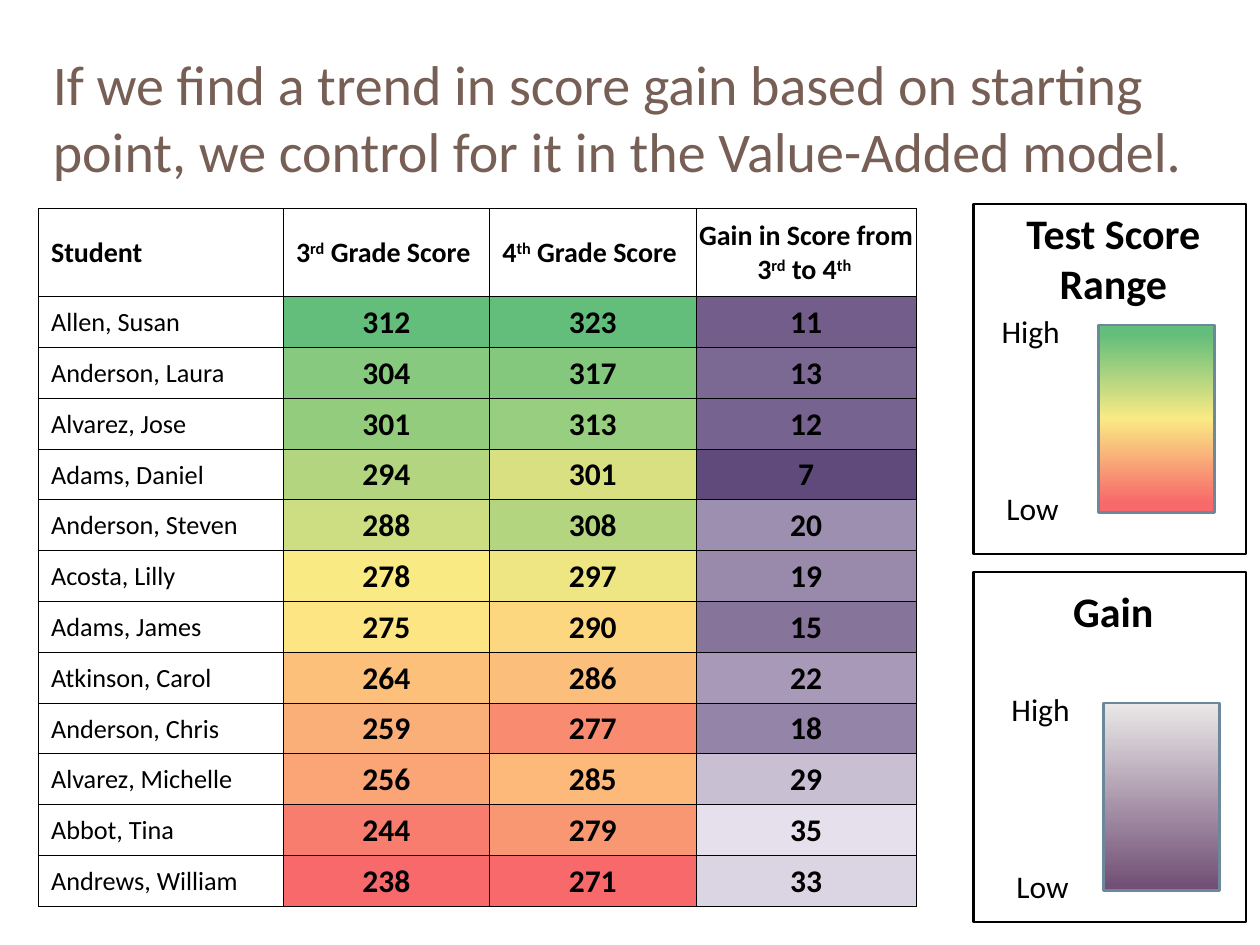
"""Build a slide with a score table and two colour scale legends."""
from copy import deepcopy

from lxml.etree import SubElement
from pptx import Presentation
from pptx.dml.color import RGBColor
from pptx.enum.shapes import MSO_SHAPE
from pptx.enum.text import MSO_ANCHOR, MSO_AUTO_SIZE, PP_ALIGN
from pptx.oxml.ns import qn
from pptx.util import Cm, Pt

BLACK = RGBColor(0x00, 0x00, 0x00)
BROWN = RGBColor(0x77, 0x5F, 0x55)
STEEL = RGBColor(0x6D, 0x87, 0x9B)
GREEN = RGBColor(0x63, 0xBE, 0x7B)
YELLOW = RGBColor(0xF9, 0xEA, 0x84)
RED = RGBColor(0xF8, 0x69, 0x6B)
PALE = RGBColor(0xEA, 0xE8, 0xE8)
PURPLE = RGBColor(0x70, 0x4D, 0x74)

TITLE = {"name": "Calibri", "size": Pt(32), "bold": False}
HEADER = {"name": "Calibri", "size": Pt(16), "bold": True}
STUDENT = {"name": "Calibri", "size": Pt(15), "bold": False}
SCORE = {"name": "Calibri", "size": Pt(18), "bold": True}
HEADING = {"name": "Calibri", "size": Pt(24), "bold": True}
LABEL = {"name": "Calibri", "size": Pt(18), "bold": False}

HEADERS = [
    [("Student", False)],
    [("3", False), ("rd", True), (" Grade Score ", False)],
    [("4", False), ("th", True), (" Grade Score ", False)],
    [("Gain in Score from 3", False), ("rd", True), (" to 4", False), ("th ", True)],
]
STUDENTS = [
    ("Allen, Susan", (312, "63BE7B"), (323, "63BE7B"), (11, "735E8B")),
    ("Anderson, Laura", (304, "87C97E"), (317, "83C87D"), (13, "7C6993")),
    ("Alvarez, Jose", (301, "94CC7E"), (313, "98CE7F"), (12, "77638F")),
    ("Adams, Daniel", (294, "B3D580"), (301, "D8E082"), (7, "60497B")),
    ("Anderson, Steven", (288, "CDDD82"), (308, "B3D580"), (20, "9D8FAF")),
    ("Acosta, Lilly", (278, "F9EA84"), (297, "EDE683"), (19, "9989AB")),
    ("Adams, James", (275, "FEE583"), (290, "FDD680"), (15, "86749B")),
    ("Atkinson, Carol", (264, "FCC07B"), (286, "FCBF7B"), (22, "A799B7")),
    ("Anderson, Chris", (259, "FBAF78"), (277, "F98B71"), (18, "9484A7")),
    ("Alvarez, Michelle", (256, "FBA576"), (285, "FCB97A"), (29, "C8BFD3")),
    ("Abbot, Tina", (244, "F97D6E"), (279, "FA9773"), (35, "E5E0EC")),
    ("Andrews, William", (238, "F8696B"), (271, "F8696B"), (33, "DBD5E3")),
]
LEGENDS = [
    {"lines": ["Test Score", "Range"], "frame_top": 4.11, "heading_top": 4.06,
     "heading_height": 2.31, "label_left": 19.94, "label_top": 6.17,
     "swatch_left": 22.15, "stops": [(0.05, GREEN), (0.5, YELLOW), (0.95, RED)]},
    {"lines": ["Gain"], "frame_top": 11.53, "heading_top": 11.68,
     "heading_height": 1.3, "label_left": 20.14, "label_top": 13.79,
     "swatch_left": 22.25, "stops": [(0, PALE), (1, PURPLE)]},
]


def add_span(para, text, style, color=BLACK):
    span = para.add_run()
    span.text = text
    for name, value in style.items():
        setattr(span.font, name, value)
    span.font.color.rgb = color
    return span


def add_box(left, top, width, height, lines, style, align, wrap):
    frame = page.shapes.add_textbox(Cm(left), Cm(top), Cm(width), Cm(height)).text_frame
    frame.word_wrap = wrap
    for index, line in enumerate(lines):
        para = frame.add_paragraph() if index else frame.paragraphs[0]
        para.alignment = align
        add_span(para, line, style)


deck = Presentation()
deck.slide_width, deck.slide_height = Cm(25.4), Cm(19.05)
page = deck.slides.add_slide(deck.slide_layouts[5])

title = page.shapes.title
title.left, title.top, title.width, title.height = Cm(0.81), Cm(0.76), Cm(23.7), Cm(3.18)
title.text_frame.word_wrap = True
title.text_frame.auto_size = MSO_AUTO_SIZE.NONE
title.text_frame.vertical_anchor = MSO_ANCHOR.MIDDLE
para = title.text_frame.paragraphs[0]
para.alignment = PP_ALIGN.LEFT
add_span(para, "If we find a trend in score gain based on starting point, "
         "we control for it in the Value-Added model.", TITLE, BROWN)

table_height, header_height = Cm(14.07), Cm(1.78)
table = page.shapes.add_table(len(STUDENTS) + 1, len(HEADERS), Cm(0.77), Cm(4.2),
                              Cm(17.7), table_height).table
table.first_row = table.horz_banding = False
for column, width in zip(table.columns, (4.94, 4.16, 4.16, 4.44)):
    column.width = Cm(width)
for row in table.rows:
    row.height = (table_height - header_height) // len(STUDENTS)
table.rows[0].height = header_height

for row_index, row in enumerate(table.rows):
    for column_index, cell in enumerate(row.cells):
        cell.vertical_anchor = MSO_ANCHOR.MIDDLE
        cell.margin_left = Cm(0.03) if column_index else Cm(0.26)
        cell.margin_right = cell.margin_top = Cm(0.03)
        cell.margin_bottom = 0
        for side in ("a:lnL", "a:lnR", "a:lnT", "a:lnB"):
            border = SubElement(cell._tc.get_or_add_tcPr(), qn(side), w=str(Pt(0.5)))
            fill = SubElement(border, qn("a:solidFill"))
            SubElement(fill, qn("a:srgbClr"), val=str(BLACK))
        cell.fill.background()
        para = cell.text_frame.paragraphs[0]
        para.alignment = PP_ALIGN.CENTER if column_index else PP_ALIGN.LEFT
        if row_index == 0:
            for text, raised in HEADERS[column_index]:
                span = add_span(para, text, HEADER)
                if raised:
                    span._r.get_or_add_rPr().set("baseline", "30000")
        elif column_index == 0:
            add_span(para, STUDENTS[row_index - 1][0], STUDENT)
        else:
            score, color = STUDENTS[row_index - 1][column_index]
            add_span(para, str(score), SCORE)
            cell.fill.solid()
            cell.fill.fore_color.rgb = RGBColor.from_string(color)

for legend in LEGENDS:
    left, top = legend["label_left"], legend["label_top"]
    frame = page.shapes.add_shape(MSO_SHAPE.RECTANGLE, Cm(19.63), Cm(legend["frame_top"]),
                                  Cm(5.49), Cm(7.06))
    frame.fill.background()
    swatch = page.shapes.add_shape(MSO_SHAPE.RECTANGLE, Cm(legend["swatch_left"]),
                                   Cm(top + 0.38), Cm(2.34), Cm(3.78))
    swatch.fill.gradient()
    swatch.fill.gradient_angle = 270
    stop_list = swatch._element.spPr.find(".//" + qn("a:gsLst"))
    for extra in legend["stops"][2:]:
        stop_list.append(deepcopy(stop_list[-1]))
    for stop, (position, color) in zip(swatch.fill.gradient_stops, legend["stops"]):
        stop.position = position
        stop.color.rgb = color
    for shape, color in ((frame, BLACK), (swatch, STEEL)):
        shape.shadow.inherit = False
        shape.line.color.rgb = color
        shape.line.width = Pt(1.5)
    add_box(19.69, legend["heading_top"], 5.51, legend["heading_height"],
            legend["lines"], HEADING, PP_ALIGN.CENTER, True)
    add_box(left, top, 1.7, 1.02, ["High"], LABEL, PP_ALIGN.LEFT, False)
    add_box(left + 0.1, top + 3.56, 1.57, 1.02, ["Low"], LABEL, PP_ALIGN.LEFT, False)

deck.save("out.pptx")
